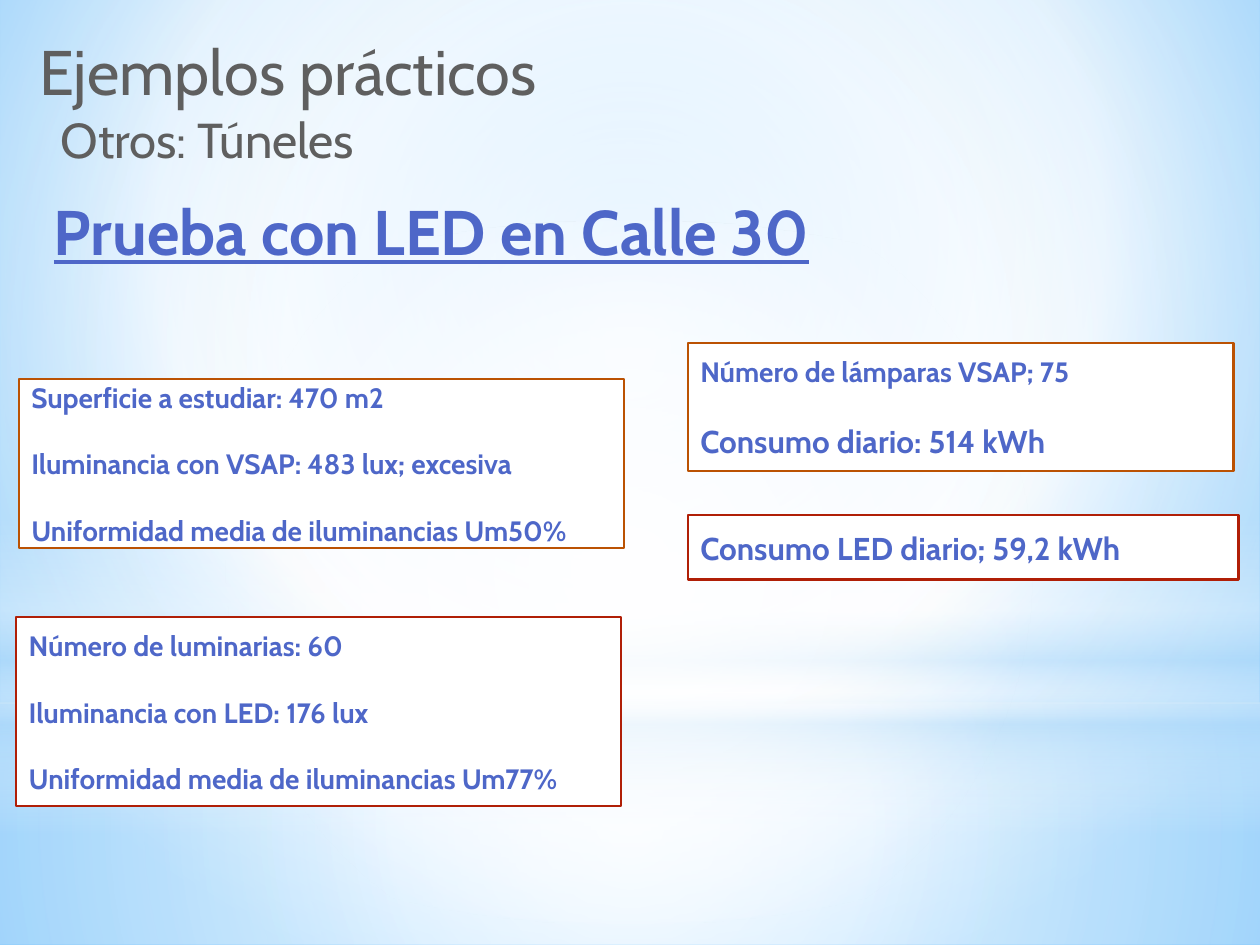
from lxml import etree
from pptx import Presentation
from pptx.dml.color import RGBColor
from pptx.enum.shapes import MSO_SHAPE
from pptx.enum.text import MSO_ANCHOR, PP_ALIGN
from pptx.oxml import parse_xml
from pptx.oxml.ns import nsdecls, qn
from pptx.util import Inches, Pt

RECT, OVAL = MSO_SHAPE.RECTANGLE, MSO_SHAPE.OVAL
MIDDLE, LEFT = MSO_ANCHOR.MIDDLE, PP_ALIGN.LEFT

COLORS = {
    "white": "FFFFFF",
    "sky": "9ED5FF",
    "azure": "5BB9FF",
    "mist": "B4DCFA",
    "grey": "5F5F5F",
    "blue": "4E67C8",
    "orange": "BB5203",
    "red": "B01F07",
}
CENTER = (50, 50, 50, 50)


class SlideBuilder:
    font = "Cabin"

    def __init__(self, page):
        self.page = page

    def color(self, name):
        return RGBColor.from_string(COLORS[name])

    def gradient(self, owner, fill, stops, focus=None):
        """Stops are (position, colour, opacity); without a focus it runs downwards."""
        fill.solid()
        solid = next(owner.iter(qn("a:solidFill")))
        grad = parse_xml(f'<a:gradFill {nsdecls("a")} rotWithShape="1"><a:gsLst/></a:gradFill>')
        for position, name, opacity in stops:
            stop = etree.SubElement(grad[0], qn("a:gs"), pos=str(position * 1000))
            shade = etree.SubElement(stop, qn("a:srgbClr"), val=COLORS[name])
            if opacity < 100:
                etree.SubElement(shade, qn("a:alpha"), val=str(opacity * 1000))
        if focus:
            route = etree.SubElement(grad, qn("a:path"), path="circle")
            sides = {side: str(value * 1000) for side, value in zip("ltrb", focus)}
            etree.SubElement(route, qn("a:fillToRect"), **sides)
        else:
            etree.SubElement(grad, qn("a:lin"), ang="5400000", scaled="0")
        solid.getparent().replace(solid, grad)

    def background(self, stops, focus):
        self.gradient(self.page.element, self.page.background.fill, stops, focus)

    def shape(self, kind, place):
        shape = self.page.shapes.add_shape(kind, *map(Inches, place))
        shape.shadow.inherit = False
        return shape

    def glow(self, kind, place, stops, focus=None):
        shape = self.shape(kind, place)
        shape.line.fill.background()
        self.gradient(shape.element, shape.fill, stops, focus)

    def set_text(self, para, text, size, color, bold=False, underline=False):
        para.text = text
        para.alignment = LEFT
        for span in para.runs:
            span.font.name = self.font
            span.font.size = Pt(size)
            span.font.bold = bold
            span.font.underline = underline
            span.font.color.rgb = self.color(color)

    def label(self, place, text, size, color, inset=None, wrap=True, **style):
        box = self.page.shapes.add_textbox(*map(Inches, place))
        frame = box.text_frame
        frame.word_wrap = wrap
        if inset is not None:
            frame.margin_left = frame.margin_right = Inches(inset)
            frame.margin_top = frame.margin_bottom = Inches(inset)
        self.set_text(frame.paragraphs[0], text, size, color, **style)

    def card(self, place, border, lines):
        card = self.shape(RECT, place)
        card.fill.solid()
        card.fill.fore_color.rgb = self.color("white")
        card.line.color.rgb = self.color(border)
        card.line.width = Pt(1.25)
        frame = card.text_frame
        frame.word_wrap = True
        frame.vertical_anchor = MIDDLE
        for index, (text, size) in enumerate(lines):
            para = frame.add_paragraph() if index else frame.paragraphs[0]
            self.set_text(para, text, size, "blue", bold=True)
            if index:
                para.space_before = Pt(19)


def main():
    deck = Presentation()
    deck.slide_width, deck.slide_height = Inches(10), Inches(7.5)
    slide = SlideBuilder(deck.slides.add_slide(deck.slide_layouts[6]))

    # Sky backdrop with soft light
    slide.background([(0, "sky", 100), (60, "white", 100), (100, "azure", 100)], (20, 10, 20, 60))
    slide.glow(RECT, (0, 5.58, 10, 1.92),
               [(0, "white", 91), (37, "white", 76), (100, "mist", 79)], CENTER)
    slide.glow(RECT, (0, 0, 10, 5.58),
               [(0, "white", 89), (48, "white", 62), (100, "mist", 79)], CENTER)
    slide.glow(RECT, (0, 4.12, 10, 2.5),
               [(0, "white", 0), (29, "white", 30), (45, "mist", 40),
                (55, "white", 26), (65, "mist", 60), (100, "white", 0)])
    slide.glow(OVAL, (0, 1.75, 10, 5.58), [(0, "white", 100), (56, "white", 0)], CENTER)

    # Headings
    slide.label((0.33, 1.48, 6.41, 0.71), "Prueba con LED en Calle 30", 36, "blue",
                wrap=False, bold=True, underline=True)
    slide.label((0.44, 0.83, 10.16, 0.86), "Otros: Túneles", 28, "grey", inset=0.04)
    slide.label((0.27, 0.22, 9.35, 0.86), "Ejemplos prácticos", 36, "grey", inset=0.04)

    # Sodium lamps (orange cards)
    slide.card((0.15, 3.01, 4.8, 1.34), "orange", [
        ("Superficie a estudiar: 470 m2", 16),
        ("Iluminancia con VSAP: 483 lux; excesiva", 16),
        ("Uniformidad media de iluminancias Um50%", 16),
    ])
    slide.card((5.46, 2.72, 4.33, 1.02), "orange", [
        ("Número de lámparas VSAP; 75", 16),
        ("Consumo diario: 514 kWh", 18),
    ])

    # LED lamps (red cards)
    slide.card((0.13, 4.9, 4.8, 1.5), "red", [
        ("Número de luminarias: 60", 16),
        ("Iluminancia con LED: 176 lux", 16),
        ("Uniformidad media de iluminancias Um77%", 16),
    ])
    slide.card((5.46, 4.09, 4.37, 0.51), "red", [("Consumo LED diario; 59,2 kWh", 18)])

    deck.save("out.pptx")


if __name__ == "__main__":
    main()
